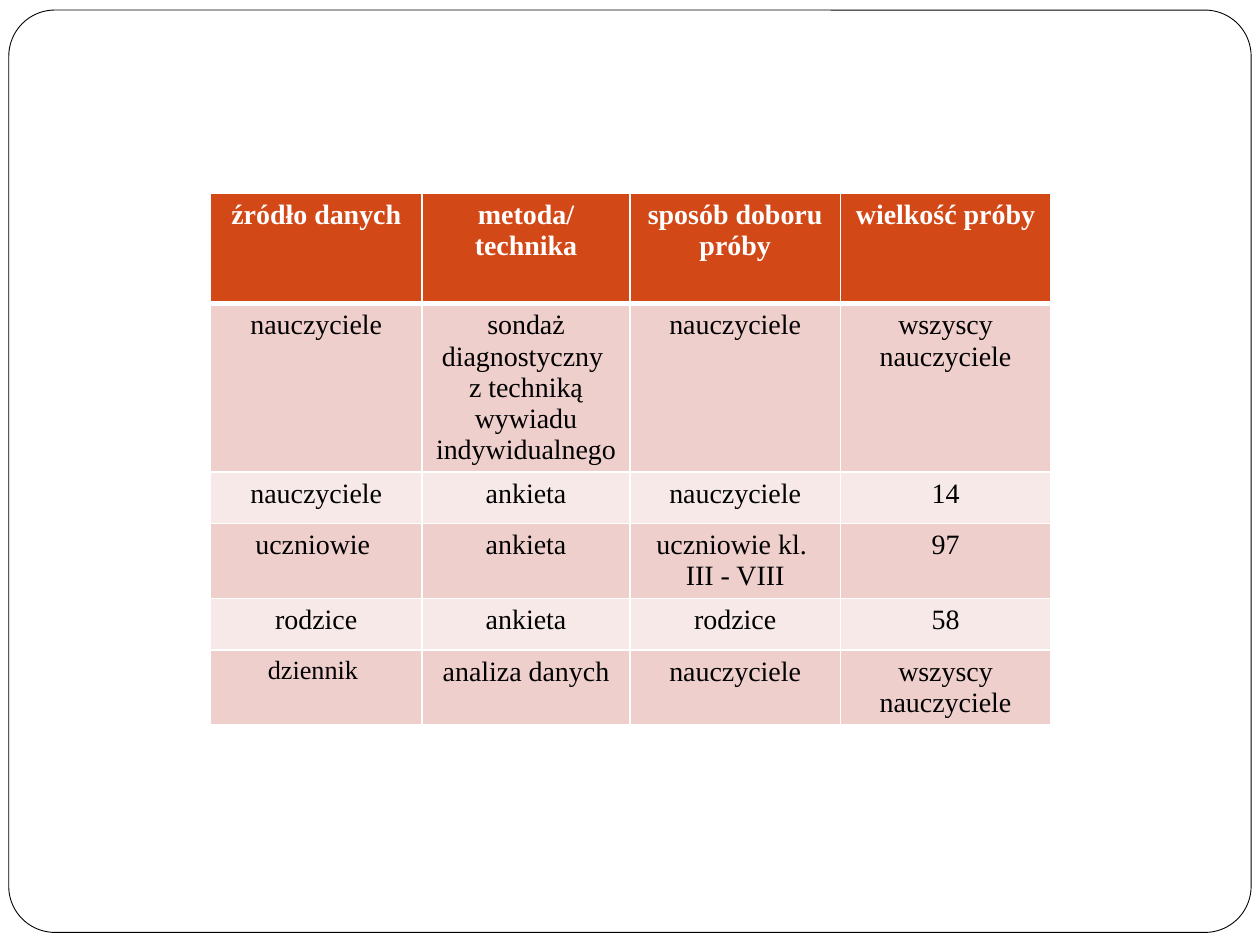
from copy import deepcopy

from lxml import etree
from pptx import Presentation
from pptx import util as u
from pptx.dml.color import RGBColor
from pptx.enum import shapes, text
from pptx.oxml import ns

COLORS = {
    "paper": "FFFFFF",
    "frame": "000000",
    "header": "D34817",
    "odd": "EFCFCC",
    "even": "F7E9E8",
    "border": "FFFFFF",
    "header_text": "FFFFFF",
    "body_text": "000000",
}
FONT = "Times New Roman"
COLUMN_WIDTHS = [1.68, 1.65, 1.67, 1.67]
ROW_HEIGHTS = [0.88] + [0.41] * 5

# "\n" starts a paragraph, "\v" breaks a line inside one
ROWS = [
    ["źródło danych", "metoda/ technika", "sposób doboru\npróby", "wielkość próby"],
    ["nauczyciele", "sondaż diagnostyczny \vz techniką wywiadu indywidualnego",
     "nauczyciele", "wszyscy nauczyciele"],
    ["nauczyciele", "ankieta", "nauczyciele", "14"],
    ["uczniowie ", "ankieta", "uczniowie kl. \nIII - VIII", "97"],
    ["rodzice", "ankieta", "rodzice", "58"],
    ["dziennik ", "analiza danych", "nauczyciele", "wszyscy nauczyciele"],
]
SMALL_CELL = (5, 0)


def rgb(name):
    return RGBColor.from_string(COLORS[name])


def add_frame(page):
    box = page.shapes.add_shape(
        shapes.MSO_SHAPE.ROUNDED_RECTANGLE,
        u.Inches(0.07), u.Inches(0.08), u.Inches(9.86), u.Inches(7.32))
    box.adjustments[0] = 0.05
    box.shadow.inherit = False
    box.fill.solid()
    box.fill.fore_color.rgb = rgb("paper")
    box.line.color.rgb = rgb("frame")
    box.line.width = u.Pt(0.5)


def set_borders(cell, widths):
    properties = cell._tc.get_or_add_tcPr()
    for side, width in widths.items():
        line = etree.SubElement(properties, ns.qn(f"a:ln{side}"), w=str(u.Pt(width)))
        fill = etree.SubElement(line, ns.qn("a:solidFill"))
        etree.SubElement(fill, ns.qn("a:srgbClr"), val=COLORS["border"])


def write_cell(cell, words, color, font_format):
    cell.text_frame.text = words
    for para in cell.text_frame.paragraphs:
        para.alignment = text.PP_ALIGN.CENTER
        for span in para.runs:
            for name, value in font_format.items():
                setattr(span.font, name, value)
            span.font.color.rgb = rgb(color)
        # Line breaks take the format of the text around them
        for line_break in para._p.findall(ns.qn("a:br")):
            line_break.append(deepcopy(para.runs[0]._r.rPr))


def add_sample_table(page):
    table = page.shapes.add_table(
        len(ROWS), len(COLUMN_WIDTHS), u.Inches(1.67), u.Inches(1.53),
        u.Inches(sum(COLUMN_WIDTHS)), u.Inches(sum(ROW_HEIGHTS))).table
    for column, width in zip(table.columns, COLUMN_WIDTHS):
        column.width = u.Inches(width)
    for row, height in zip(table.rows, ROW_HEIGHTS):
        row.height = u.Inches(height)

    for i, row in enumerate(ROWS):
        is_header = i == 0
        band = "header" if is_header else "odd" if i % 2 else "even"
        # A thick rule parts the header from the body
        widths = {"L": 1, "R": 1, "T": 3 if i == 1 else 1, "B": 3 if is_header else 1}
        for j, words in enumerate(row):
            cell = table.cell(i, j)
            set_borders(cell, widths)
            cell.fill.solid()
            cell.fill.fore_color.rgb = rgb(band)
            size = 15 if (i, j) == SMALL_CELL else 16
            write_cell(cell, words, "header_text" if is_header else "body_text",
                       {"name": FONT, "size": u.Pt(size), "bold": is_header})


def main():
    deck = Presentation()
    deck.slide_width = u.Inches(10)
    deck.slide_height = u.Inches(7.5)
    page = deck.slides.add_slide(deck.slide_layouts[6])
    add_frame(page)
    add_sample_table(page)
    deck.save("out.pptx")


if __name__ == "__main__":
    main()
